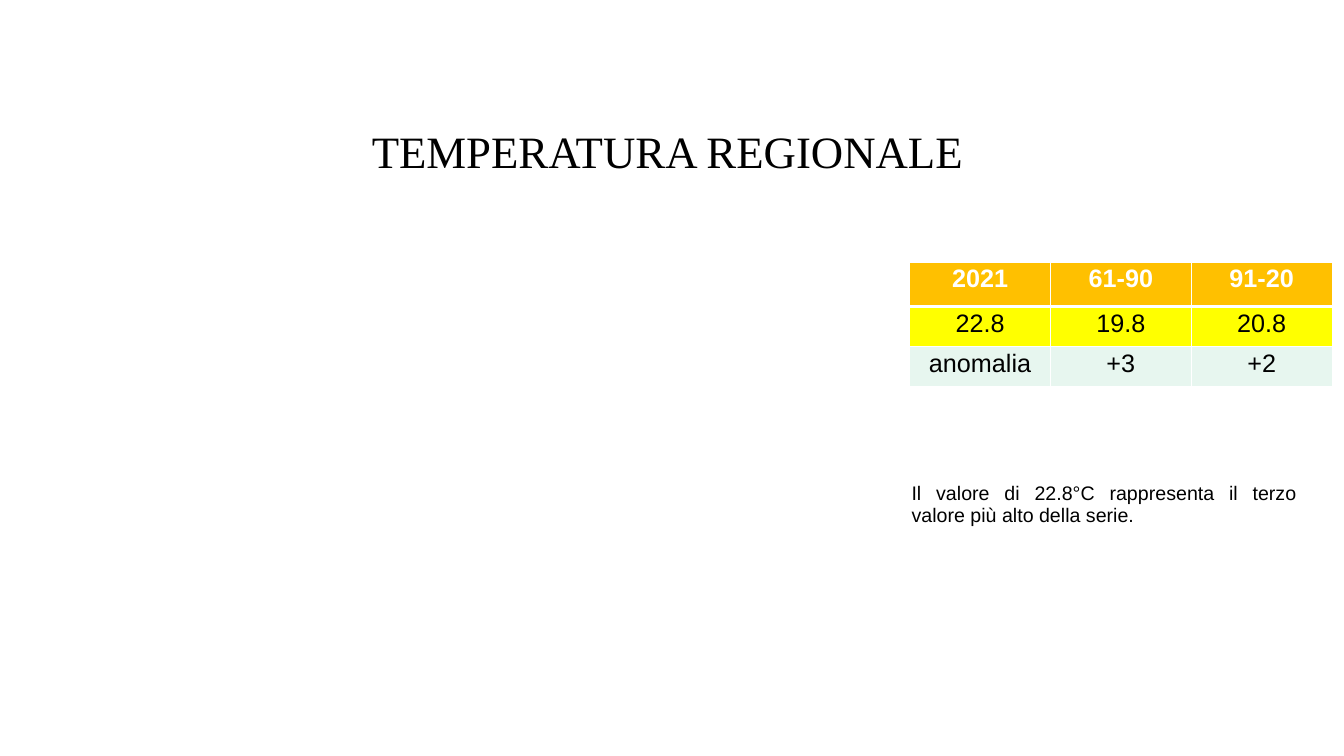
from pptx import Presentation as Deck
from pptx.util import Cm, Pt
from pptx.dml.color import RGBColor as Rgb
from pptx.enum.text import PP_ALIGN as Align, MSO_ANCHOR as Anchor
from lxml.etree import fromstring

INK = {"black": "000000", "white": "FFFFFF", "gold": "FFC000",
       "yellow": "FFFF00", "mint": "E7F6EF"}
NS = "http://schemas.openxmlformats.org/drawingml/2006/main"


class Page:
    def __init__(self, deck):
        self.slide = deck.slides.add_slide(deck.slide_layouts[6])
        self.face = "Arial"

    def style(self, frame, size, align, face=None, ink="black", bold=False, line=None):
        for para in frame.paragraphs:
            para.alignment = align
            if line:
                para.line_spacing = line
            for run in para.runs:
                font = run.font
                font.name = face or self.face
                font.size = Pt(size)
                font.bold = bold
                font.color.rgb = Rgb.from_string(INK[ink])

    def text(self, words, rect, size, align, pads=None, anchor=Anchor.TOP, **look):
        frame = self.slide.shapes.add_textbox(*map(Cm, rect)).text_frame
        frame.word_wrap = True
        frame.vertical_anchor = anchor
        if pads:
            (frame.margin_left, frame.margin_top,
             frame.margin_right, frame.margin_bottom) = map(Cm, pads)
        frame.text = words
        self.style(frame, size, align, **look)

    def edge(self, cell, top, base):
        props = cell._tc.get_or_add_tcPr()
        sides = (("L", 1), ("R", 1), ("T", top), ("B", base))
        for spot, (side, width) in enumerate(sides):
            props.insert(spot, fromstring(
                f'<a:ln{side} xmlns:a="{NS}" w="{Pt(width)}"><a:solidFill>'
                f'<a:srgbClr val="{INK["white"]}"/></a:solidFill></a:ln{side}>'))

    def table(self, rows, fills, rect, highs):
        table = self.slide.shapes.add_table(
            len(rows), len(rows[0]), *map(Cm, rect)).table
        for r, (row, fill, high) in enumerate(zip(rows, fills, highs)):
            table.rows[r].height = Cm(high)
            head = r == 0
            for c, words in enumerate(row):
                cell = table.cell(r, c)
                cell.text = words
                cell.fill.solid()
                cell.fill.fore_color.rgb = Rgb.from_string(INK[fill])
                self.edge(cell, 3 if r == 1 else 1, 3 if head else 1)
                self.style(cell.text_frame, 18, Align.CENTER, bold=head,
                           ink="white" if head else "black", line=0.93)


def main():
    deck = Deck()
    deck.slide_width, deck.slide_height = Cm(33.88), Cm(19.05)
    page = Page(deck)
    page.text("TEMPERATURA REGIONALE", (0.74, 2.92, 32.18, 1.6), 32, Align.CENTER,
              pads=(0, 0.2, 0, 0), face="Times New Roman")
    page.text("Il valore di 22.8°C rappresenta il terzo valore più alto della serie.",
              (22.73, 12.04, 10.21, 1.37), 14, Align.JUSTIFY,
              anchor=Anchor.MIDDLE, line=0.93)
    highs = (1.12, 1.01, 1.01)
    page.table((("2021", "61-90", "91-20"),
                ("22.8", "19.8", "20.8"),
                ("anomalia", "+3", "+2")),
               ("gold", "yellow", "mint"), (22.93, 6.6, 10.65, sum(highs)), highs)
    deck.save("out.pptx")


if __name__ == "__main__":
    main()
